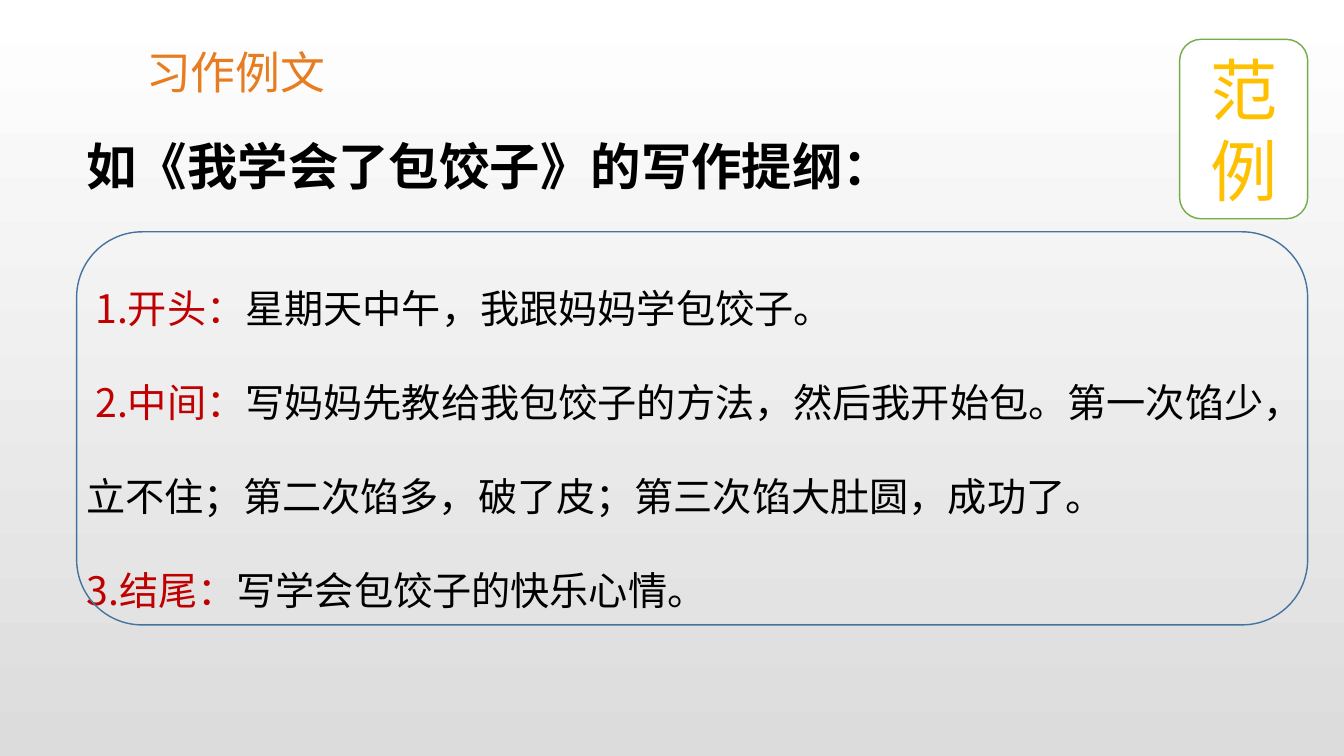
from pptx import Presentation
from pptx.dml.color import RGBColor
from pptx.enum.shapes import MSO_SHAPE
from pptx.enum.text import MSO_ANCHOR, MSO_AUTO_SIZE, PP_ALIGN
from pptx.util import Inches, Pt

ROUNDED = MSO_SHAPE.ROUNDED_RECTANGLE
MIDDLE = MSO_ANCHOR.MIDDLE
GROW = MSO_AUTO_SIZE.SHAPE_TO_FIT_TEXT
CENTER = PP_ALIGN.CENTER
CJK_FONT = "Noto Sans CJK SC"


def color(value):
    return RGBColor.from_string(value)


def add_text_box(shapes, left, top, width, height):
    shape = shapes.add_textbox(Inches(left), Inches(top), Inches(width), Inches(height))
    shape.text_frame.word_wrap = True
    shape.text_frame.auto_size = GROW
    return shape.text_frame


presentation = Presentation()
presentation.slide_width = Inches(13.33)
presentation.slide_height = Inches(7.5)
slide = presentation.slides.add_slide(presentation.slide_layouts[6])

background = slide.background.fill
background.gradient()
background.gradient_angle = 270
for stop, value, position in zip(background.gradient_stops, ("FFFFFF", "DCDCDC"), (0, 1)):
    stop.color.rgb = color(value)
    stop.position = position

badge = slide.shapes.add_shape(ROUNDED, Inches(11.7), Inches(0.39), Inches(1.27), Inches(1.78))
badge.shadow.inherit = False
badge.fill.solid()
badge.fill.fore_color.rgb = color("FFFFFF")
badge.line.color.rgb = color("70AD47")
badge.line.width = Pt(1)
badge.text_frame.word_wrap = True
badge.text_frame.vertical_anchor = MIDDLE
paragraph = badge.text_frame.paragraphs[0]
paragraph.text = "范例"
paragraph.alignment = CENTER
paragraph.font.name = CJK_FONT
paragraph.font.size = Pt(48)
paragraph.font.color.rgb = color("FFC000")

headings = [
    ("习作例文", (1.35, 0.39, 2.08, 0.64), 32, "E77C20", False),
    ("如《我学会了包饺子》的写作提纲：", (0.76, 1.29, 9.24, 0.71), 36, "000000", True),
]
for text, box, size, value, bold in headings:
    paragraph = add_text_box(slide.shapes, *box).paragraphs[0]
    paragraph.text = text
    paragraph.font.name = "Arial"
    paragraph.font.size = Pt(size)
    paragraph.font.bold = bold
    paragraph.font.color.rgb = color(value)

outline_group = slide.shapes.add_group_shape()
outline_text = add_text_box(outline_group.shapes, 0.76, 2.3, 12.37, 3.87)
outline = [
    (" 1.开头：", "星期天中午，我跟妈妈学包饺子。"),
    (" 2.中间：", "写妈妈先教给我包饺子的方法，然后我开始包。第一次馅少，立不住；"
                "第二次馅多，破了皮；第三次馅大肚圆，成功了。"),
    ("3.结尾：", "写学会包饺子的快乐心情。"),
]
for index, parts in enumerate(outline):
    paragraph = outline_text.add_paragraph() if index else outline_text.paragraphs[0]
    paragraph.line_spacing = 2.0
    paragraph.font.name = CJK_FONT
    paragraph.font.size = Pt(28)
    for text, value in zip(parts, ("C00000", "000000")):
        run = paragraph.add_run()
        run.text = text
        run.font.color.rgb = color(value)

frame = outline_group.shapes.add_shape(ROUNDED, Inches(0.76), Inches(2.3), Inches(12.21), Inches(3.9))
frame.shadow.inherit = False
frame.fill.background()
frame.line.color.rgb = color("43739E")
frame.line.width = Pt(1)

presentation.save("out.pptx")
